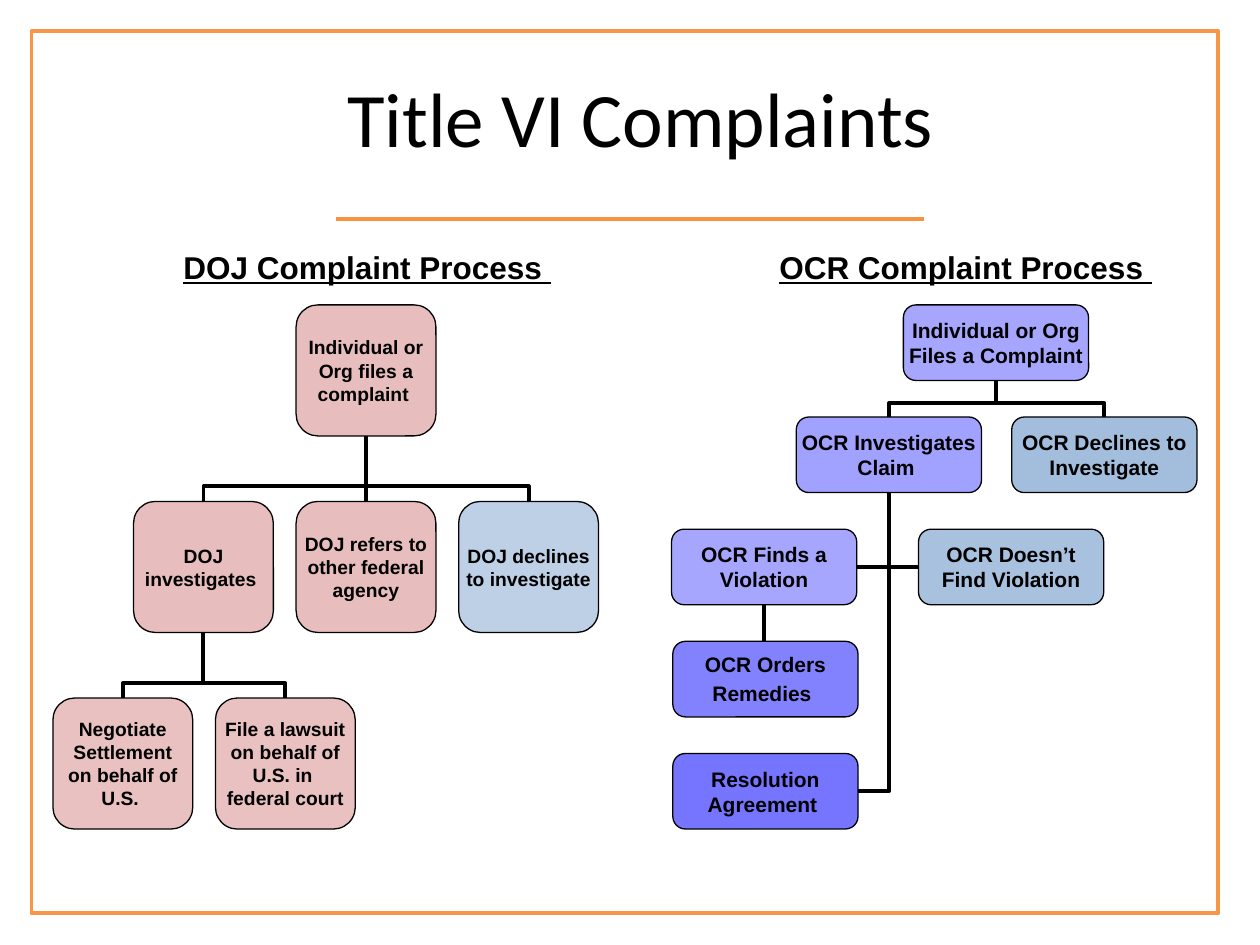
from lxml import etree
from pptx import Presentation
from pptx.dml.color import RGBColor
from pptx.enum.shapes import MSO_CONNECTOR as CONNECTOR, MSO_SHAPE as SHAPE
from pptx.enum.text import MSO_ANCHOR as ANCHOR, PP_ALIGN as ALIGN
from pptx.oxml.ns import qn
from pptx.util import Inches, Pt

BLACK, ORANGE, RULE_ORANGE = "000000", "F79646", "F69240"
RED, BLUE, VIOLET = "C0504D", "4F81BD", "0000FF"


def rgb(hex_color):
    return RGBColor.from_string(hex_color)


class Chart:
    """Style of the flow charts and the slide they are drawn on."""

    body_font = "Arial"
    title_font = "Calibri"
    link_width = 2.25

    def __init__(self, slide):
        self.shapes = slide.shapes

    def set_lines(self, frame, lines, size, font=body_font, bold=True, underline=None):
        frame.word_wrap = True
        frame.vertical_anchor = ANCHOR.MIDDLE
        for index, line in enumerate(lines):
            paragraph = frame.paragraphs[0] if index == 0 else frame.add_paragraph()
            paragraph.alignment = ALIGN.CENTER
            paragraph.font.name = font
            paragraph.font.size = Pt(size)
            paragraph.font.bold = bold
            paragraph.font.underline = underline
            paragraph.font.color.rgb = rgb(BLACK)
            paragraph.add_run().text = line

    def text(self, left, top, width, height, line, size, **style):
        label = self.shapes.add_textbox(*map(Inches, (left, top, width, height)))
        self.set_lines(label.text_frame, [line], size, **style)

    def frame(self, left, top, width, height):
        border = self.shapes.add_shape(
            SHAPE.RECTANGLE, *map(Inches, (left, top, width, height)))
        border.shadow.inherit = False
        border.fill.background()
        border.line.color.rgb = rgb(ORANGE)
        border.line.width = Pt(2.25)

    def box(self, left, top, width, height, lines, size, color, opacity):
        step = self.shapes.add_shape(
            SHAPE.ROUNDED_RECTANGLE, *map(Inches, (left, top, width, height)))
        step.shadow.inherit = False
        step.fill.solid()
        step.fill.fore_color.rgb = rgb(color)
        tint = step._element.spPr.find(qn("a:solidFill"))[0]
        etree.SubElement(tint, qn("a:alpha"), val=str(opacity * 1000))
        step.line.color.rgb = rgb(BLACK)
        step.line.width = Pt(0.75)
        frame = step.text_frame
        frame.margin_left = frame.margin_right = 0
        frame.margin_top = frame.margin_bottom = 0
        self.set_lines(frame, lines, size)
        return step

    def line(self, start, end, color=BLACK, width=link_width, kind=CONNECTOR.STRAIGHT):
        link = self.shapes.add_connector(kind, *map(int, start + end))
        link.line.color.rgb = rgb(color)
        link.line.width = Pt(width)
        etree.SubElement(link._element.spPr, qn("a:effectLst"))
        return link

    def branch(self, parent, child, bend):
        """Link a child's top to its parent's bottom, turning at the bend share."""
        x1, y1 = child.left + child.width // 2, child.top
        x2, y2 = parent.left + parent.width // 2, parent.top + parent.height
        if abs(x1 - x2) < Inches(0.02):
            self.line((x2, y1), (x2, y2))
            return
        # The preset runs sideways, so it is laid out flat and then turned.
        side = 1 if x1 > x2 else -1
        mid_x, mid_y = (x1 + x2) / 2, (y1 + y2) / 2
        half_run, half_drop = abs(x1 - x2) / 2, (y1 - y2) / 2
        link = self.line((mid_x + side * half_drop, mid_y - half_run),
                         (mid_x - side * half_drop, mid_y + half_run),
                         kind=CONNECTOR.ELBOW)
        props = link._element.spPr
        props.find(qn("a:xfrm")).set("rot", str((90 if side > 0 else 270) * 60000))
        guides = props.find(qn("a:prstGeom")).find(qn("a:avLst"))
        etree.SubElement(guides, qn("a:gd"), name="adj1",
                         fmla=f"val {round(bend * 100000)}")

    def side_branch(self, parent, child):
        """Link a child's inner side to its parent's bottom with one corner."""
        x2, y2 = parent.left + parent.width // 2, parent.top + parent.height
        x1 = child.left if child.left > x2 else child.left + child.width
        link = self.line((x1, child.top + child.height // 2), (x2, y2),
                         kind=CONNECTOR.ELBOW)
        link._element.spPr.find(qn("a:prstGeom")).set("prst", "bentConnector2")


def draw_doj(chart):
    def step(left, row, lines, color=RED, opacity=37):
        return chart.box(left, 2.42 + 1.56 * row, 1.11, 1.04, lines, 11, color, opacity)

    complaint = step(2.35, 0, ["Individual or Org files a complaint "])
    investigates = step(1.06, 1, ["DOJ investigates "])
    refers = step(2.35, 1, ["DOJ refers to other federal agency"])
    declines = step(3.64, 1, ["DOJ declines to investigate"], BLUE)
    settlement = step(0.42, 2, ["Negotiate Settlement on behalf of U.S. "], opacity=35)
    lawsuit = step(1.71, 2, ["File a lawsuit on behalf of U.S. in ", "federal court"],
                   opacity=35)
    for parent, children in ((complaint, (investigates, refers, declines)),
                             (investigates, (settlement, lawsuit))):
        for child in children:
            chart.branch(parent, child, 0.23)


def draw_ocr(chart):
    def step(left, row, line, color=VIOLET, opacity=35):
        return chart.box(left, 2.42 + 0.89 * row, 1.47, 0.6, [line], 12, color, opacity)

    complaint = step(7.17, 0, "Individual or Org Files a Complaint")
    investigates = step(6.32, 1, "OCR Investigates Claim ", opacity=37)
    declines = step(8.03, 1, "OCR Declines to Investigate", BLUE, 52)
    violation = step(5.33, 2, "OCR Finds a Violation")
    no_violation = step(7.29, 2, "OCR Doesn’t Find Violation", BLUE, 49)
    remedies = step(5.34, 3, "OCR Orders Remedies", opacity=49)
    agreement = step(5.34, 4, "Resolution Agreement ", opacity=54)

    closing_space = remedies.text_frame.paragraphs[0].add_run()
    closing_space.text = " "
    closing_space.font.size = Pt(14)

    for parent, child in ((complaint, investigates), (complaint, declines),
                          (violation, remedies)):
        chart.branch(parent, child, 0.38)
    for child in (violation, no_violation, agreement):
        chart.side_branch(investigates, child)


def main():
    deck = Presentation()
    deck.slide_width, deck.slide_height = Inches(10), Inches(7.5)
    chart = Chart(deck.slides.add_slide(deck.slide_layouts[6]))

    chart.text(0.5, 0.3, 9.17, 1.25, "Title VI Complaints", 44,
               font=Chart.title_font, bold=False)
    chart.frame(0.25, 0.25, 9.42, 7)
    chart.line((Inches(2.67), Inches(1.74)), (Inches(7.33), Inches(1.74)),
               RULE_ORANGE, 2)
    draw_doj(chart)
    draw_ocr(chart)
    chart.text(1.25, 1.92, 3.33, 0.4, "DOJ Complaint Process ", 18, underline=True)
    chart.text(6.08, 1.92, 3.17, 0.4, "OCR Complaint Process ", 18, underline=True)
    deck.save("out.pptx")


if __name__ == "__main__":
    main()
